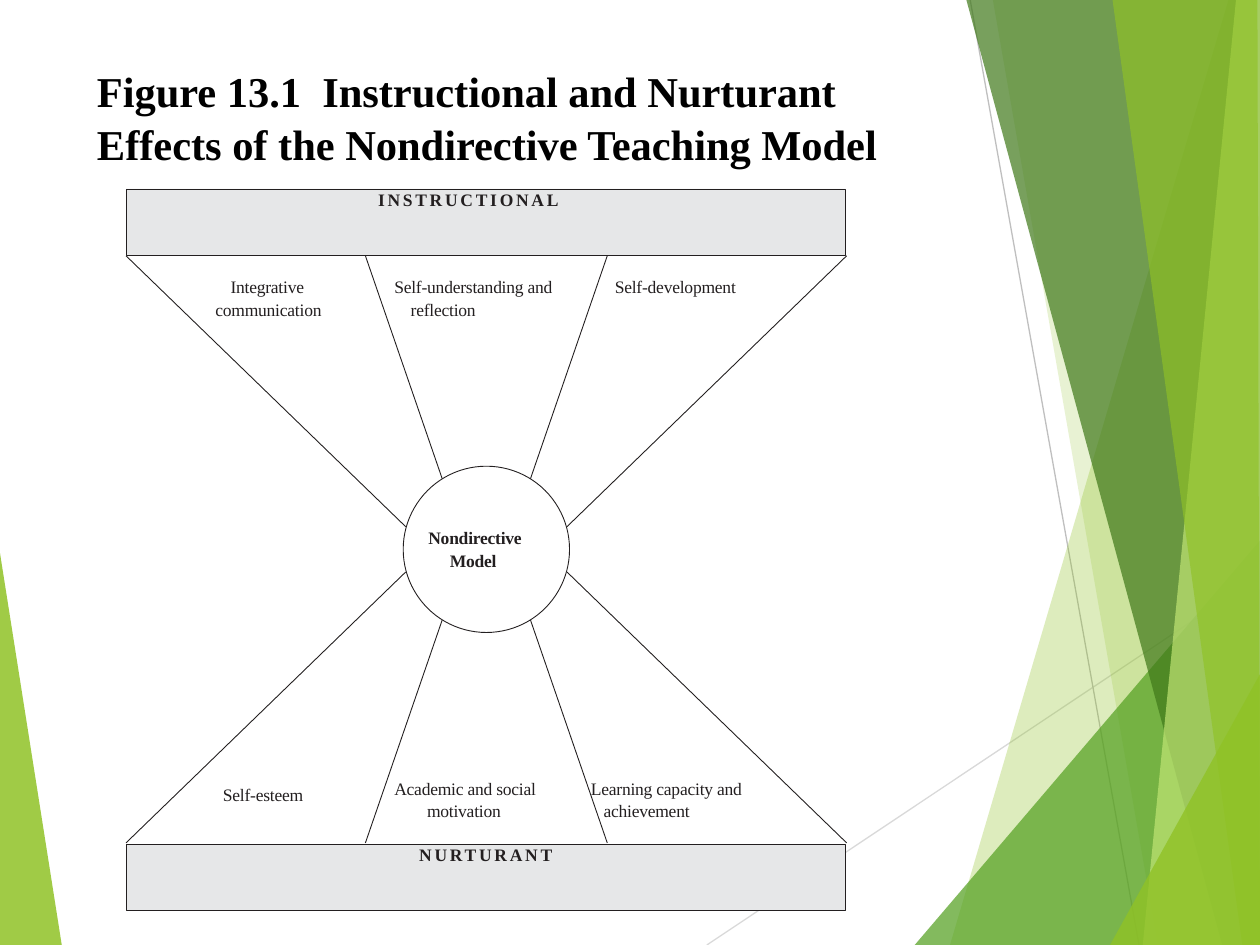
from dataclasses import dataclass
from typing import Any

from lxml import etree
from pptx import Presentation
from pptx.dml import color
from pptx.enum import shapes, text
from pptx.oxml import ns
from pptx.util import Inches, Pt

FACETS = [
    ("90C226", 85, [(0, 4.39), (0.49, 7.5), (0, 7.5)]),
    ("90C226", 30, [(9.75, 0), (7.54, 7.5), (10, 7.5), (10, 0)]),
    ("90C226", 20, [(7.88, 0), (9.19, 7.5), (10, 7.5), (10, 0)]),
    ("54A021", 72, [(7.26, 7.5), (10, 4.29), (10, 7.5)]),
    ("3F7819", 70, [(7.67, 0), (9.7, 7.5), (10, 7.5), (10, 0)]),
    ("C0E474", 70, [(9.81, 0), (9.07, 7.5), (10, 7.5), (10, 0)]),
    ("90C226", 65, [(8.83, 0), (9.86, 7.5), (10, 7.5), (9.98, 0)]),
    ("90C226", 80, [(8.81, 7.5), (10, 5.35), (10, 7.5)]),
]
THIN_LINES = [("D9D9D9", (5.61, 7.5), (10, 4.57)), ("BFBFBF", (7.7, 0), (9.04, 7.5))]

CENTER_X, CENTER_Y = 3.86, 4.36
SPOKES = [((2.86, 2.33), (0.64, 0.18)), ((0.96, 2.33), (0.35, 0.56))]

LABELS = [
    ("Integrative communication", (1.71, 2.18, 1.17, 0.65), 0, 0.12),
    ("Self-understanding and reflection", (3.13, 2.18, 1.54, 0.8), 0.13, -0.13),
    ("Self-development", (4.88, 2.18, 1.46, 0.59), 0, 0),
    ("Self-esteem", (1.77, 6.21, 0.84, 0.18), 0, 0),
    ("Academic and social motivation", (3.13, 6.16, 1.3, 0.37), 0.26, -0.26),
    ("Learning capacity and achievement", (4.69, 6.16, 1.2, 0.37), 0.1, -0.1),
]


def rgb(value):
    """Turn a hex string into a colour."""
    return color.RGBColor.from_string(value)


@dataclass
class FigureSlide:
    """Hold the style and the current slide."""

    slide: Any
    font: str = "Times New Roman"
    ink: str = "231F20"
    panel: str = "E6E7E8"
    size: float = 10
    line_width: float = 0.5

    def facet(self, fill, opacity, points):
        """Draw a translucent polygon."""
        corners = [(Inches(x), Inches(y)) for x, y in points]
        builder = self.slide.shapes.build_freeform(*corners[0])
        builder.add_line_segments(corners[1:], close=True)
        shape = builder.convert_to_shape()
        shape.shadow.inherit = False
        shape.fill.solid()
        shape.fill.fore_color.rgb = rgb(fill)
        shape.line.fill.background()
        tint = next(shape._element.spPr.iter(ns.qn("a:srgbClr")))
        etree.SubElement(tint, ns.qn("a:alpha"), val=str(opacity * 1000))

    def line(self, start, end, stroke=None, width=None):
        """Draw a straight line."""
        ends = [Inches(value) for value in (*start, *end)]
        connector = self.slide.shapes.add_connector(shapes.MSO_CONNECTOR.STRAIGHT, *ends)
        connector.line.color.rgb = rgb(stroke or self.ink)
        connector.line.width = Pt(width or self.line_width)
        etree.SubElement(connector._element.spPr, ns.qn("a:effectLst"))

    def outlined(self, kind, box, fill):
        """Draw a filled preset shape with a thin outline."""
        shape = self.slide.shapes.add_shape(kind, *map(Inches, box))
        shape.shadow.inherit = False
        shape.fill.solid()
        shape.fill.fore_color.rgb = rgb(fill)
        shape.line.color.rgb = rgb(self.ink)
        shape.line.width = Pt(self.line_width)
        return shape

    def set_text(self, shape, words, margin=0, indent=0, bold=False, size=None, ink=None,
                 spacing=0, leading=1.08, align=text.PP_ALIGN.LEFT):
        """Set and format the text of a shape."""
        frame = shape.text_frame
        frame.text = words
        frame.word_wrap = True
        frame.vertical_anchor = text.MSO_ANCHOR.TOP
        frame.margin_left = frame.margin_right = frame.margin_top = frame.margin_bottom = 0
        paragraph = frame.paragraphs[0]
        paragraph.alignment = align
        paragraph.line_spacing = leading
        properties = paragraph._p.get_or_add_pPr()
        properties.set("marL", str(Inches(margin)))
        properties.set("indent", str(Inches(indent)))
        for run in paragraph.runs:
            run.font.name = self.font
            run.font.size = Pt(size or self.size)
            run.font.bold = bold
            run.font.color.rgb = rgb(ink or self.ink)
            run._r.get_or_add_rPr().set("spc", str(round(spacing * 100)))

    def label(self, words, box, margin=0, indent=0, **style):
        """Add a text box."""
        shape = self.slide.shapes.add_textbox(*map(Inches, box))
        self.set_text(shape, words, margin, indent, **style)

    def banner(self, words, top, margin=0, align=text.PP_ALIGN.LEFT):
        """Add a grey bar with a spaced heading."""
        shape = self.outlined(shapes.MSO_SHAPE.RECTANGLE, (1, top, 5.71, 0.53), self.panel)
        self.set_text(shape, words, margin, bold=True, spacing=1.6, leading=1, align=align)


def main():
    """Build the slide and save it."""
    presentation = Presentation()
    presentation.slide_width, presentation.slide_height = Inches(10), Inches(7.5)
    figure = FigureSlide(presentation.slides.add_slide(presentation.slide_layouts[6]))

    figure.facet(*FACETS[0])
    for stroke, start, end in THIN_LINES:
        figure.line(start, end, stroke, 0.75)
    for facet in FACETS[1:]:
        figure.facet(*facet)

    figure.label("Figure 13.1  Instructional and Nurturant Effects of the Nondirective Teaching Model",
                 (0.77, 0.5, 6.74, 0.85), bold=True, size=24.3, ink="000000", leading=1.04)

    for outer, inner in SPOKES:
        for side_x in (-1, 1):
            for side_y in (-1, 1):
                start, end = [(CENTER_X + side_x * x, CENTER_Y + side_y * y)
                              for x, y in (outer, inner)]
                figure.line(start, end)
    figure.outlined(shapes.MSO_SHAPE.OVAL, (3.2, 3.7, 1.32, 1.32), "FFFFFF")
    figure.label("Nondirective Model", (3.4, 4.17, 0.94, 0.37), 0.17, -0.17,
                 bold=True, spacing=-0.1)
    for words, box, margin, indent in LABELS:
        figure.label(words, box, margin, indent, spacing=-0.1)

    figure.banner("NURTURANT", 6.7, align=text.PP_ALIGN.CENTER)
    figure.banner("INSTRUCTIONAL", 1.5, margin=2)
    presentation.save("out.pptx")


if __name__ == "__main__":
    main()
